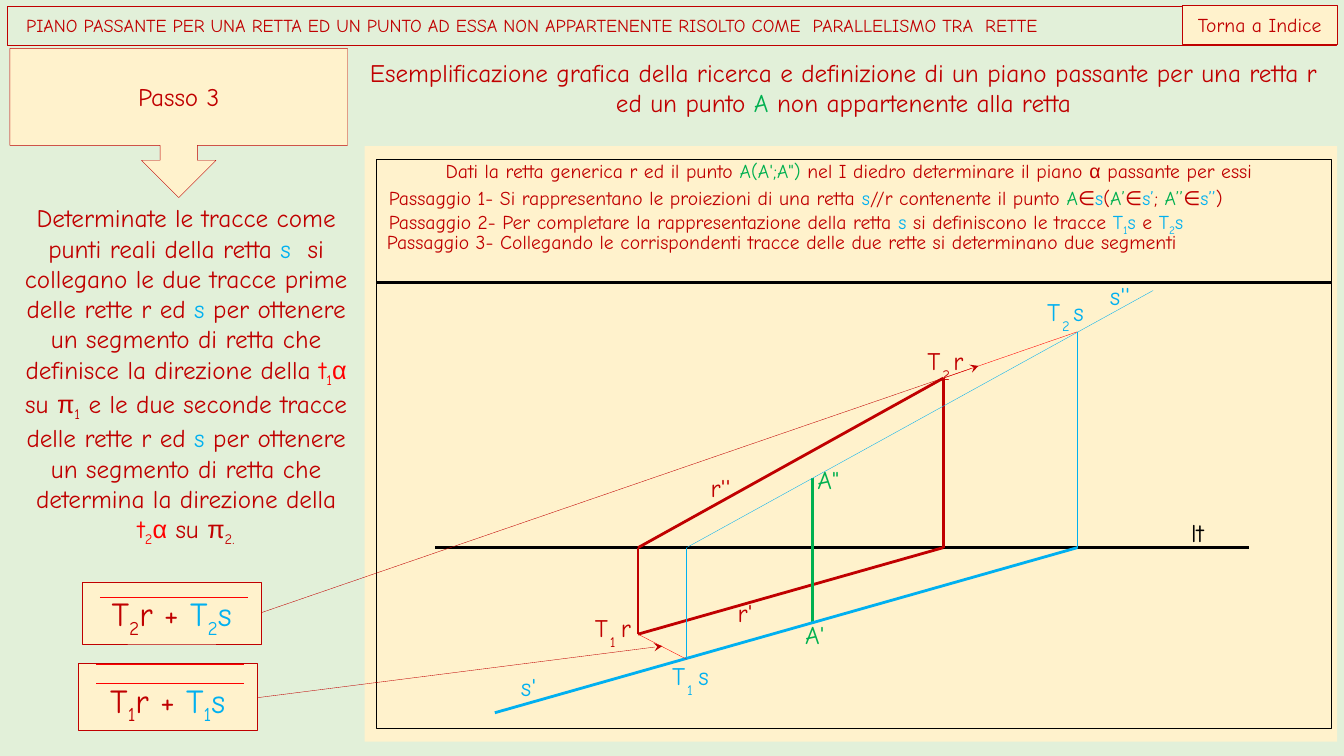
from lxml import etree
from pptx import Presentation
from pptx.dml.color import RGBColor
from pptx.enum.shapes import MSO_CONNECTOR, MSO_SHAPE
from pptx.enum.text import MSO_ANCHOR, MSO_AUTO_SIZE, PP_ALIGN
from pptx.oxml.ns import qn
from pptx.util import Cm, Pt

LINE = MSO_CONNECTOR.STRAIGHT
RECTANGLE, CALLOUT = MSO_SHAPE.RECTANGLE, MSO_SHAPE.DOWN_ARROW_CALLOUT
LEFT, CENTER = PP_ALIGN.LEFT, PP_ALIGN.CENTER
TOP, MIDDLE, BOTTOM = MSO_ANCHOR.TOP, MSO_ANCHOR.MIDDLE, MSO_ANCHOR.BOTTOM


class Theme:
    font, greek_font = "Comic Neue", "Arial"
    mint, cream, black = "E2F0D9", "FFF2CC", "000000"
    dark, red, green, blue = "C00000", "FF0000", "00B050", "00B0F0"
    header, small, normal, large = 13, 14, 18, 24
    hair, thin, medium = 0, 0.25, 0.5


DARK, RED, GREEN, BLUE = Theme.dark, Theme.red, Theme.green, Theme.blue

# Content: spans are (text, colour), "_" marks a subscript span
HEADER = [("PIANO PASSANTE PER UNA RETTA ED UN PUNTO AD ESSA NON APPARTENENTE "
           "RISOLTO COME  PARALLELISMO TRA  RETTE", DARK)]
BUTTON = [("Torna a Indice", DARK)]
STEP = [("Passo 3", DARK)]
SUBTITLE = [
    ("Esemplificazione grafica della ricerca e definizione di un piano passante "
     "per una retta r ed un punto ", DARK),
    ("A", GREEN), (" non appartenente alla retta", DARK)]
EXPLANATION = [
    ("Determinate le tracce come punti reali della retta ", DARK), ("s", BLUE),
    ("  si collegano le due tracce prime delle rette r ed ", DARK), ("s", BLUE),
    (" per ottenere un segmento di retta che definisce la direzione della ", DARK),
    ("t", RED), ("_1", RED), ("α", RED), (" su ", DARK), ("π", DARK), ("_1", DARK),
    (" e le due seconde tracce delle rette r ed ", DARK), ("s", BLUE),
    (" per ottenere un segmento di retta che determina la direzione della ", DARK),
    ("t", RED), ("_2", RED), ("α", RED), (" su ", DARK), ("π", DARK), ("_2.", DARK)]
GIVEN = [
    ("Dati la retta generica r ed il punto ", DARK), ("A(A';A\") ", GREEN),
    ("nel I diedro determinare il piano ", DARK), ("α", DARK),
    (" passante per essi ", DARK)]
PASSAGES = [  # left, top, spans
    (9.55, 4.55, [
        ("Passaggio 1- Si rappresentano le proiezioni di una retta", DARK),
        (" s", BLUE), ("//r contenente il punto ", DARK),
        ("A", GREEN), ("∈", DARK), ("s", BLUE), ("(", DARK),
        ("A’", GREEN), ("∈", DARK), ("s’", BLUE), ("; ", DARK),
        ("A’’", GREEN), ("∈", DARK), ("s’’", BLUE), (")", DARK)]),
    (9.55, 5.16, [
        ("Passaggio 2- Per completare la rappresentazione della retta ", DARK),
        ("s", BLUE), (" si definiscono le tracce ", DARK),
        ("T", BLUE), ("_1", BLUE), ("s", BLUE), (" e ", DARK),
        ("T", BLUE), ("_2", BLUE), ("s", BLUE)]),
    (9.5, 5.66, [
        ("Passaggio 3- Collegando le corrispondenti tracce delle due rette "
         "si determinano due segmenti", DARK)])]
LABELS = [  # text, colour, left, top
    ("lt", Theme.black, 30.02, 13.03),
    ("A'", GREEN, 20.29, 15.6), ("A\"", GREEN, 20.6, 11.71),
    ("r'", DARK, 18.59, 15.06), ("r''", DARK, 17.91, 11.89),
    ("s'", BLUE, 13.13, 16.92), ("s''", BLUE, 27.97, 7.06)]
TRACE_LABELS = [  # index, line name, colour, left, top
    ("1", "r", DARK, 14.99, 15.44), ("2", "r", DARK, 23.37, 8.71),
    ("1", "s", BLUE, 16.94, 16.64), ("2", "s", BLUE, 26.39, 7.47)]
SUMS = [  # index, box, tops of the overlines
    ("2", (2.08, 14.66, 4.5, 1.57), [15.04]),
    ("1", (1.98, 16.71, 4.5, 1.7), [16.74, 17.22])]

# Geometry of the drawing, in centimetres
GROUND = 13.8
T1R, T2R = (16.08, 15.98), (23.77, 9.53)
T1S, T2S = (17.3, 16.61), (27.15, 8.36)
A1, A2 = (20.47, 15.7), (20.47, 12.04)


def on_ground(point):
    return point[0], GROUND


SEGMENTS = [  # start, end, colour, width
    ((9.5, 7.11), (33.55, 7.11), Theme.black, Theme.hair),
    ((10.97, GROUND), (31.47, GROUND), Theme.black, Theme.hair),
    (on_ground(T1R), T2R, DARK, Theme.hair),
    (T1R, on_ground(T2R), DARK, Theme.hair),
    (on_ground(T1R), T1R, DARK, Theme.hair),
    (on_ground(T2R), T2R, DARK, Theme.hair),
    (A2, A1, GREEN, Theme.hair),
    (on_ground(T1S), (29.06, 7.32), BLUE, Theme.thin),
    ((12.47, 17.96), on_ground(T2S), BLUE, Theme.hair),
    (on_ground(T2S), T2S, BLUE, Theme.thin),
    (on_ground(T1S), T1S, BLUE, Theme.thin),
    (T1R, T1S, RED, Theme.thin),
    (T2S, T2R, RED, Theme.thin)]
ARROWS = [((6.58, 15.44), (24.66, 9.22)), ((6.5, 17.58), (16.69, 16.28))]


def rgb(code):
    return RGBColor.from_string(code)


def place(shape, box):
    shape.left, shape.top, shape.width, shape.height = map(Cm, box)


def write(shape, spans, size, align=LEFT, anchor=TOP, inset=None):
    frame = shape.text_frame
    frame.word_wrap = True
    frame.auto_size = MSO_AUTO_SIZE.NONE
    frame.vertical_anchor = anchor
    if inset is not None:
        frame.margin_left = frame.margin_right = Cm(inset)
        frame.margin_top = frame.margin_bottom = Cm(0)
    para = frame.paragraphs[0]
    para.alignment = align
    para.space_before = Pt(0)
    para.font.name, para.font.size = Theme.font, Pt(size)
    for text, colour in spans:
        span = para.add_run()
        span.text = text.lstrip("_")
        span.font.color.rgb = rgb(colour)
        if text.startswith("_"):
            span.font._element.set("baseline", "-25000")
        if text in "απ":
            span.font.name = Theme.greek_font
    return para


def add_text(page, box, spans, size, **layout):
    write(page.shapes.add_textbox(*map(Cm, box)), spans, size, **layout)


def add_box(page, box, fill=None, line=None, width=Theme.thin, kind=RECTANGLE):
    shape = page.shapes.add_shape(kind, *map(Cm, box))
    shape.shadow.inherit = False
    if fill:
        shape.fill.solid()
        shape.fill.fore_color.rgb = rgb(fill)
    else:
        shape.fill.background()
    if line:
        shape.line.color.rgb = rgb(line)
        shape.line.width = Pt(width)
    else:
        shape.line.fill.background()
    return shape


def add_line(page, start, end, colour, width, arrow=False):
    line = page.shapes.add_connector(LINE, *map(Cm, start + end))
    line.line.color.rgb = rgb(colour)
    line.line.width = Pt(width)
    if arrow:
        etree.SubElement(line.line._get_or_add_ln(), qn("a:tailEnd"), type="stealth")
    etree.SubElement(line._element.spPr, qn("a:effectLst"))


def main():
    deck = Presentation()
    deck.slide_width, deck.slide_height = Cm(33.87), Cm(19.05)
    page = deck.slides.add_slide(deck.slide_layouts[1])
    page.background.fill.solid()
    page.background.fill.fore_color.rgb = rgb(Theme.mint)

    # Header bar, button, step and subtitle
    title, body = page.placeholders
    place(title, (0.18, 0.15, 33.5, 0.99))
    title.line.color.rgb = rgb(DARK)
    title.line.width = Pt(Theme.thin)
    write(title, HEADER, Theme.header, anchor=MIDDLE, inset=0.48)
    button = add_box(page, (29.79, 0.13, 3.91, 0.99), Theme.cream, DARK)
    write(button, BUTTON, Theme.small, CENTER, MIDDLE)
    callout = add_box(page, (0.25, 1.22, 8.51, 3.76), Theme.cream, DARK, kind=CALLOUT)
    write(callout, STEP, Theme.normal, CENTER, MIDDLE)
    add_text(page, (8.76, 1.32, 24.99, 1.8), SUBTITLE, Theme.normal, align=CENTER)

    # Explanation, without bullet
    place(body, (0.18, 4.98, 9.02, 9.5))
    para = write(body, EXPLANATION, Theme.normal, CENTER)
    properties = para._p.get_or_add_pPr()
    properties.set("marL", "0")
    properties.set("indent", "0")
    properties.find(qn("a:defRPr")).addprevious(etree.Element(qn("a:buNone")))

    # Panel with the given data and the passages
    add_box(page, (9.19, 3.68, 24.51, 15.01), Theme.cream)
    add_box(page, (9.5, 4.01, 24.05, 14.35), line=Theme.black, width=Theme.hair)
    add_text(page, (9.45, 4.01, 24.05, 0.61), GIVEN, Theme.small, align=CENTER, inset=0)
    for left, top, spans in PASSAGES:
        add_text(page, (left, top, 24.18, 0.86), spans, Theme.small)

    # Projections and their labels
    for segment in SEGMENTS:
        add_line(page, *segment)
    labels = list(LABELS)
    for index, name, colour, left, top in TRACE_LABELS:
        labels += [("T", colour, left, top),
                   ("_" + index, colour, left + 0.38, top + 0.09),
                   (name, colour, left + 0.66, top)]
    for text, colour, left, top in labels:
        add_text(page, (left, top, 0.85, 0.76), [(text, colour)], Theme.normal, inset=0)

    # Sums of traces with overlines, and arrows to the drawing
    for index, box, overlines in SUMS:
        spans = [("T", DARK), ("_" + index, DARK), ("r + ", DARK),
                 ("T", BLUE), ("_" + index, BLUE), ("s", BLUE)]
        write(add_box(page, box, Theme.cream, DARK), spans, Theme.large, CENTER, BOTTOM)
        start = box[0] + 0.44
        for top in overlines:
            add_line(page, (start, top), (start + 3.73, top), RED, Theme.medium)
    for start, end in ARROWS:
        add_line(page, start, end, DARK, Theme.thin, arrow=True)

    deck.save("out.pptx")


if __name__ == "__main__":
    main()
